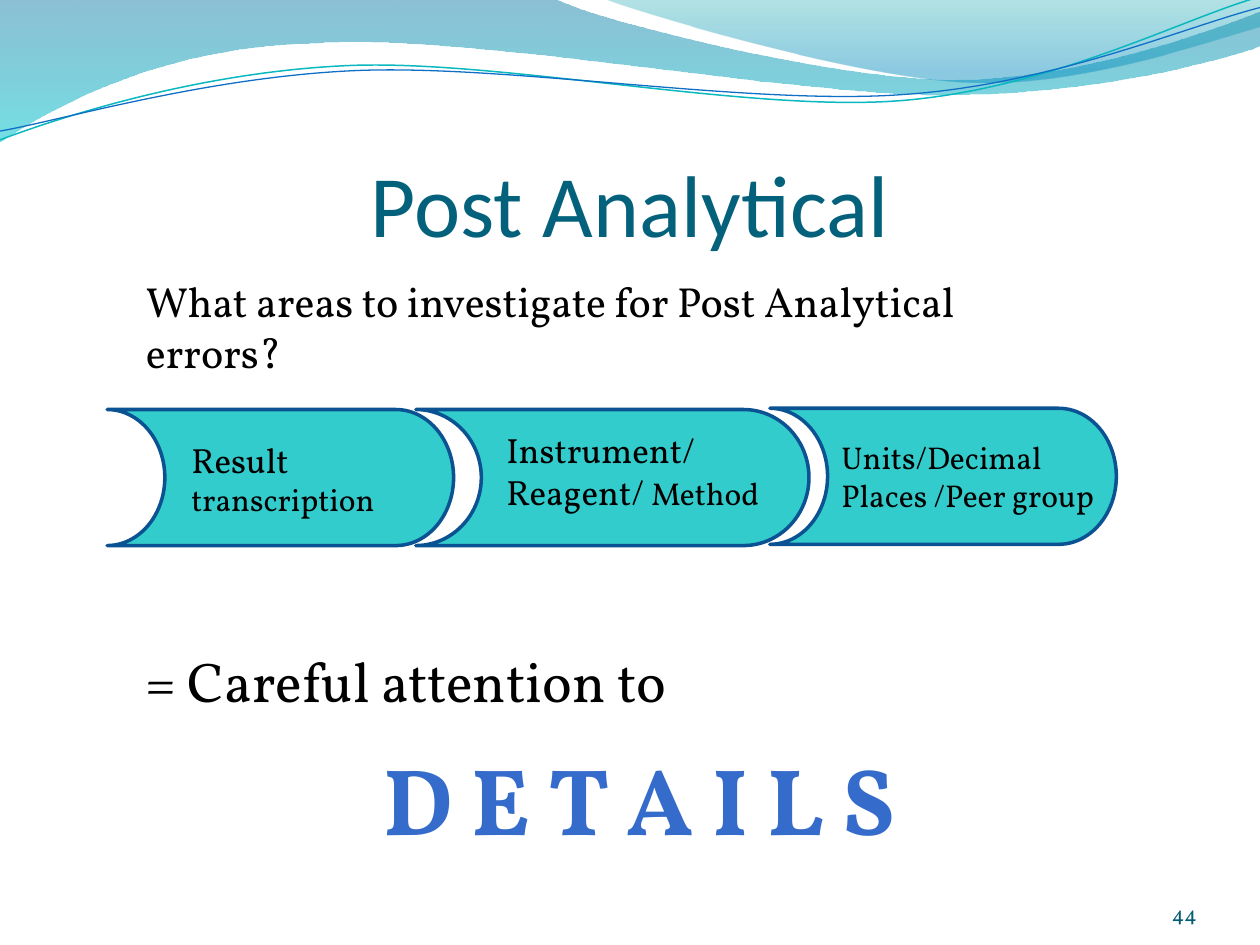
from math import cos, radians, sin

from lxml import etree
from pptx import Presentation
from pptx.dml.color import RGBColor
from pptx.enum.shapes import MSO_SHAPE
from pptx.enum.text import MSO_ANCHOR, PP_ALIGN
from pptx.oxml.ns import qn
from pptx.util import Inches, Pt

STORED_DATA = MSO_SHAPE.FLOWCHART_STORED_DATA
TOP, BOTTOM = MSO_ANCHOR.TOP, MSO_ANCHOR.BOTTOM
LEFT, CENTER, RIGHT = PP_ALIGN.LEFT, PP_ALIGN.CENTER, PP_ALIGN.RIGHT

COLUMNS, ROWS = 100, 75
CELL = Inches(0.1)
BODY_FONT, TITLE_FONT = "Vollkorn", "Calibri"
BLACK = "000000"
STRAND_TILT = -2.7

# Waves: a start point, then lines (x, y) or Bezier curves (three points), in grid cells.
BROAD_WAVE = [
    (0, 0), (44, -0.1), (47.6, 1.7, 66.4, 6.3, 75.8, 6.3),
    (85.3, 6.3, 95.8, 2.6, 100, 0.9), (100.1, 3.6),
    (98.3, 4.4, 87, 7.6, 74.6, 7.5), (62.2, 7.5, 38.2, 2.8, 25.7, 3.4),
    (12.9, 3.6, 4.6, 8.3, -0.1, 11.3), (0, 0)]
RIGHT_WAVE = [
    (47.9, -0.1), (50.9, 1.1, 68.2, 6.2, 76.9, 6.5),
    (85.6, 6.9, 96.1, 3.2, 100, 2.1), (100, 0), (47.9, -0.1)]
TEAL_STRAND = [
    (0, 11.1), (4.8, 9.3, 15.8, 5.7, 27.7, 5.2),
    (39.5, 4.7, 59.3, 8.9, 71.3, 8), (83.3, 7.1, 93.8, 1.5, 99.8, -0.2)]
BLUE_STRAND = [
    (0, 10.4), (4.7, 9.6, 16.4, 6.1, 28.3, 5.6),
    (40.3, 5.1, 59.7, 8.4, 71.7, 7.5), (83.6, 6.7, 94.1, 2.1, 100, 0.6)]

# Left, top and width of each step of the chain.
CHAIN = [(8.5, 32.5, 27.5), (33, 32.5, 31.2), (61.1, 32.4, 27.5)]
CHAIN_HEIGHT = 10.8

# Box and (text, size) pieces of each step's label.
LABELS = [
    ((14.2, 34.3, 21.8, 7.4), [("Result ", 20), ("transcription", 18)]),
    ((39.2, 33.5, 25, 7.7), [("Instrument/ Reagent/ ", 20), ("Method", 18)]),
    ((65.8, 34.3, 22.8, 7.1), [("Units/Decimal Places /Peer group", 18)]),
]

DETAILS_STOPS = [(0, "6488D4", 100), (49, "356BCA", 100), (50, "005DB1", 100),
                 (92, "00539E", 100), (100, "00519B", 100)]


def rgb(hex_colour):
    return RGBColor.from_string(hex_colour)


def cells(*values):
    return [round(value * CELL) for value in values]


def set_gradient(fill, element, stops):
    """Fill from top to bottom with stops of (position, colour, opacity)."""
    fill.gradient()
    fill.gradient_angle = 270
    stop_list = next(element.iter(qn("a:gsLst")))
    for stop in list(stop_list):
        stop_list.remove(stop)
    for position, colour, opacity in stops:
        stop = etree.SubElement(stop_list, qn("a:gs"), pos=str(position * 1000))
        tint = etree.SubElement(stop, qn("a:srgbClr"), val=colour)
        if opacity < 100:
            etree.SubElement(tint, qn("a:alpha"), val=str(opacity * 1000))


def turn(segment, centre, degrees):
    """Rotate the points of one segment clockwise about centre."""
    angle = radians(degrees)
    turned = []
    for x, y in zip(segment[::2], segment[1::2]):
        dx, dy = x - centre[0], y - centre[1]
        turned += [centre[0] + dx * cos(angle) - dy * sin(angle),
                   centre[1] + dx * sin(angle) + dy * cos(angle)]
    return turned


def add_outline(slide, outline, closed):
    """Draw every point as a line, then merge each curve's three lines into a Bezier."""
    start, *segments = [cells(*segment) for segment in outline]
    points = [point for segment in segments
              for point in zip(segment[::2], segment[1::2])]
    builder = slide.shapes.build_freeform(*start)
    builder.add_line_segments(points, close=closed)
    shape = builder.convert_to_shape()
    shape.shadow.inherit = False
    lines = shape.element.iter(qn("a:lnTo"))
    lines = iter(list(lines))
    for segment in segments:
        first = next(lines)
        if len(segment) == 6:
            first.tag = qn("a:cubicBezTo")
            for _ in range(2):
                control = next(lines)
                first.append(control[0])
                control.getparent().remove(control)
    return shape


def add_wave(slide, outline, stops):
    wave = add_outline(slide, outline, True)
    set_gradient(wave.fill, wave.element, stops)
    wave.line.fill.background()


def add_strand(slide, outline, centre, colour, width):
    """Draw the strand level, then tilt it into place about its centre."""
    level = [turn(segment, centre, -STRAND_TILT) for segment in outline]
    strand = add_outline(slide, level, False)
    strand.rotation = STRAND_TILT
    strand.fill.background()
    strand.line.color.rgb = rgb(colour)
    strand.line.width = Pt(width)


def add_step(slide, left, top, width):
    step = slide.shapes.add_shape(STORED_DATA, *cells(left, top, width, CHAIN_HEIGHT))
    step.rotation = 180
    step.shadow.inherit = False
    step.fill.solid()
    step.fill.fore_color.rgb = rgb("33CCCC")
    step.line.color.rgb = rgb("0B5292")
    step.line.width = Pt(2)


def add_text(slide, box, pieces, colour=BLACK, font=BODY_FONT, align=LEFT,
             anchor=TOP, insets=(1, 0.5, 0.5), wrap=True):
    """Add one paragraph of (text, size) pieces; insets are side, top and bottom."""
    frame = slide.shapes.add_textbox(*cells(*box)).text_frame
    frame.word_wrap = wrap
    frame.vertical_anchor = anchor
    side, frame.margin_top, frame.margin_bottom = cells(*insets)
    frame.margin_left = frame.margin_right = side
    paragraph = frame.paragraphs[0]
    paragraph.alignment = align
    for text, size in pieces:
        run = paragraph.add_run()
        run.text = text
        run.font.size = Pt(size)
        run.font.name = font
        run.font.color.rgb = rgb(colour)
    return paragraph


def add_background(slide):
    add_wave(slide, BROAD_WAVE, [(0, "0074A1", 45), (100, "00C6CF", 55)])
    add_wave(slide, RIGHT_WAVE, [(0, "00A1A9", 30), (80, "008BBF", 45)])
    add_strand(slide, TEAL_STRAND, (49.9, 5.75), "0AB8BF", 0.85)
    add_strand(slide, BLUE_STRAND, (49.95, 5.9), "0F6FC6", 0.75)


def add_details(slide):
    word = add_text(slide, (27.2, 58.3, 45.6, 10.1), [(" D E T A I L S", 54)],
                    align=CENTER, wrap=False).runs[0]
    word.font.bold = True
    set_gradient(word.font.fill, word._r, DETAILS_STOPS)


def main():
    deck = Presentation()
    deck.slide_width, deck.slide_height = cells(COLUMNS, ROWS)
    slide = deck.slides.add_slide(deck.slide_layouts[6])

    add_background(slide)
    add_text(slide, (86.7, 69.5, 8.3, 4), [("44", 12)], "045D75",
             align=RIGHT, anchor=BOTTOM, insets=(0, 0, 0))
    for step in CHAIN:
        add_step(slide, *step)
    for box, pieces in LABELS:
        add_text(slide, box, pieces)
    add_text(slide, (10.6, 21.4, 69.9, 17.2),
             [("What areas to investigate for Post Analytical errors?", 24)])
    add_text(slide, (10.6, 50.8, 43.6, 6.4), [("= Careful attention to", 32)])
    add_details(slide)
    add_text(slide, (5, 7.7, 90, 12.5), [("Post Analytical", 50)], "04617B",
             TITLE_FONT, CENTER, BOTTOM, insets=(0, 0.5, 0))

    deck.save("out.pptx")


if __name__ == "__main__":
    main()
